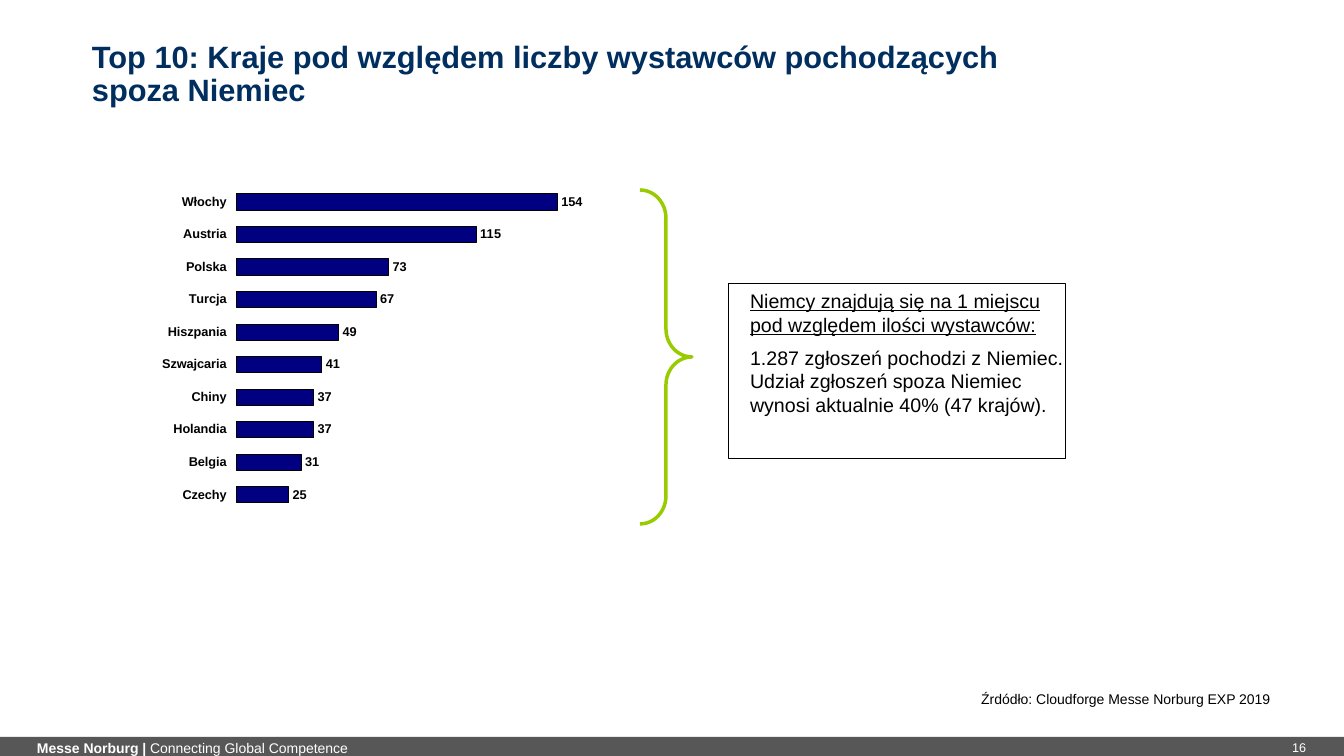
from lxml import etree
from pptx import Presentation
from pptx.chart.data import CategoryChartData
from pptx.dml.color import RGBColor
from pptx.enum.chart import XL_CHART_TYPE, XL_LABEL_POSITION, XL_TICK_LABEL_POSITION, XL_TICK_MARK
from pptx.enum.shapes import MSO_SHAPE
from pptx.enum.text import MSO_ANCHOR, PP_ALIGN
from pptx.oxml import parse_xml
from pptx.oxml.ns import nsdecls, qn
from pptx.util import Pt

BAR_CLUSTERED = XL_CHART_TYPE.BAR_CLUSTERED
OUTSIDE_END = XL_LABEL_POSITION.OUTSIDE_END
LABELS_LOW = XL_TICK_LABEL_POSITION.LOW
NO_TICKS = XL_TICK_MARK.NONE
RECTANGLE, RIGHT_BRACE = MSO_SHAPE.RECTANGLE, MSO_SHAPE.RIGHT_BRACE
TOP, MIDDLE = MSO_ANCHOR.TOP, MSO_ANCHOR.MIDDLE
LEFT, RIGHT = PP_ALIGN.LEFT, PP_ALIGN.RIGHT

FONT = "Arial"
COLORS = {
    "title": "002E5F", "text": "000000", "bar": "000080",
    "brace": "99CC00", "footer": "575757", "white": "FFFFFF",
}
EMU_PER_PX = 914400 / 100.8


def px(*lengths):
    return [round(length * EMU_PER_PX) for length in lengths]


def add_text(box, paragraphs, size, color="text", align=LEFT, anchor=TOP,
             insets=(10, 5, 10, 5), line_spacing=None, space_before=0):
    """Each paragraph is a list of (text, style) runs; style is 'b', 'u' or ''."""
    frame = slide.shapes.add_textbox(*px(*box)).text_frame
    frame.word_wrap = True
    frame.vertical_anchor = anchor
    (frame.margin_left, frame.margin_top,
     frame.margin_right, frame.margin_bottom) = px(*insets)
    for index, runs in enumerate(paragraphs):
        paragraph = frame.add_paragraph() if index else frame.paragraphs[0]
        paragraph.alignment = align
        paragraph.line_spacing = line_spacing
        paragraph.space_before = Pt(space_before if index else 0)
        for text, style in runs:
            run = paragraph.add_run()
            run.text = text
            run.font.name = FONT
            run.font.size = Pt(size)
            run.font.bold = style == "b"
            run.font.underline = style == "u"
            run.font.color.rgb = RGBColor.from_string(COLORS[color])


presentation = Presentation()
presentation.slide_width, presentation.slide_height = px(1344, 756)
slide = presentation.slides.add_slide(presentation.slide_layouts[6])

# Footer bar, brace and frame: kind, box, fill, line, line width
outlines = {}
for name, kind, box, fill, line, width in [
    ("footer", RECTANGLE, (0, 737, 1344, 22), "footer", None, 0),
    ("brace", RIGHT_BRACE, (640, 190, 52, 334), None, "brace", 2.5),
    ("frame", RECTANGLE, (729, 284, 337, 175), None, "text", 0.75),
]:
    shape = slide.shapes.add_shape(kind, *px(*box))
    shape.shadow.inherit = False
    if fill:
        shape.fill.solid()
        shape.fill.fore_color.rgb = RGBColor.from_string(COLORS[fill])
    else:
        shape.fill.background()
    if line:
        shape.line.color.rgb = RGBColor.from_string(COLORS[line])
        shape.line.width = Pt(width)
    else:
        shape.line.fill.background()
    outlines[name] = shape
outlines["brace"].adjustments[0] = 0.54
outlines["brace"].adjustments[1] = 0.5

# Footer text and page number
add_text((37, 737, 480, 22),
         [[("Messe Norburg | ", "b"), ("Connecting Global Competence", "")]],
         10, color="white", anchor=MIDDLE, insets=(0, 0, 0, 0))
add_text((1255, 737, 51, 22), [[("16", "")]], 9, color="white",
         align=RIGHT, anchor=MIDDLE, insets=(0, 0, 0, 0))

# Title
add_text((82, 59, 939, 64),
         [[("Top 10: Kraje pod względem liczby wystawców pochodzących spoza Niemiec", "b")]],
         22, color="title", anchor=MIDDLE, insets=(10, 5, 10, 38), line_spacing=Pt(24))

# Exhibitors per country, listed from the bottom bar up
exhibitors = {
    "Czechy": 25, "Belgia": 31, "Holandia": 37, "Chiny": 37, "Szwajcaria": 41,
    "Hiszpania": 49, "Turcja": 67, "Polska": 73, "Austria": 115, "Włochy": 154,
}
chart_data = CategoryChartData()
chart_data.categories = list(exhibitors)
chart_data.add_series("Series 1", list(exhibitors.values()))
chart = slide.shapes.add_chart(BAR_CLUSTERED, *px(75, 179, 577, 339), chart_data).chart
chart.has_legend = False
chart.has_title = False

plot = chart.plots[0]
plot.gap_width = 100
plot.vary_by_categories = False
plot.has_data_labels = True
labels = plot.data_labels
labels.show_value = True
labels.position = OUTSIDE_END

bars = plot.series[0]
bars.invert_if_negative = False
bars.format.fill.solid()
bars.format.fill.fore_color.rgb = RGBColor.from_string(COLORS["bar"])
bars.format.line.color.rgb = RGBColor.from_string(COLORS["text"])
bars.format.line.width = Pt(0.69)

category_axis, value_axis = chart.category_axis, chart.value_axis
category_axis.major_tick_mark = NO_TICKS
category_axis.tick_label_position = LABELS_LOW
category_axis.format.line.fill.background()
value_axis.minimum_scale = 0
value_axis.maximum_scale = 180
value_axis.has_major_gridlines = False
value_axis.visible = False

for font, size in [(chart.font, 9.6), (category_axis.tick_labels.font, 9.1), (labels.font, 9.1)]:
    font.name = FONT
    font.size = Pt(size)
    font.bold = True
    font.color.rgb = RGBColor.from_string(COLORS["text"])

# Fixed inner plot area
layout = parse_xml(f"<c:layout {nsdecls('c')}><c:manualLayout/></c:layout>")
for tag, value in [("layoutTarget", "inner"), ("xMode", "edge"), ("yMode", "edge"),
                   ("x", 0.28), ("y", 0.02), ("w", 0.65), ("h", 0.96)]:
    etree.SubElement(layout[0], qn(f"c:{tag}")).set("val", str(value))
plot_area = chart.element.find(".//" + qn("c:plotArea"))
for old_layout in plot_area.findall(qn("c:layout")):
    plot_area.remove(old_layout)
plot_area.insert(0, layout)

# Remark beside the brace
add_text((740, 284, 338, 141), [
    [("Niemcy znajdują się na 1 miejscu pod względem ilości wystawców:", "u")],
    [("1.287 zgłoszeń pochodzi z Niemiec. Udział zgłoszeń spoza Niemiec "
      "wynosi aktualnie 40% (47 krajów).", "")],
], 14, space_before=7)

# Source line
add_text((782, 689, 498, 23), [[("Źrdódło: Cloudforge Messe Norburg EXP 2019", "")]],
         10, align=RIGHT, line_spacing=0.8)

presentation.save("out.pptx")
